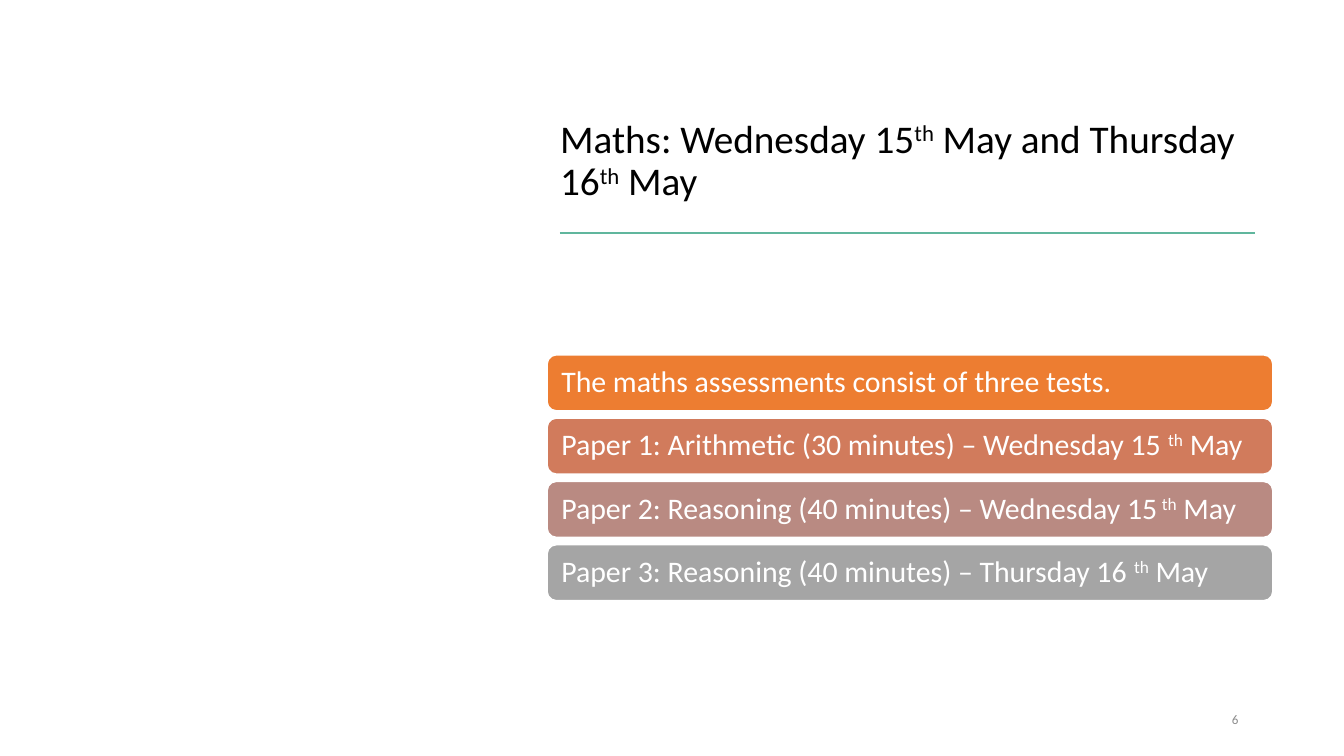
from dataclasses import dataclass

import pptx
import pptx.dml.color
import pptx.enum.shapes
import pptx.enum.text
import pptx.oxml.ns
import pptx.util
from lxml import etree

Pt = pptx.util.Pt
ALIGN = pptx.enum.text.PP_ALIGN
ANCHOR = pptx.enum.text.MSO_ANCHOR


@dataclass(frozen=True)
class Theme:
    font: str = "Calibri"
    title_size: float = 21
    test_size: float = 16
    number_size: float = 7
    ink: str = "000000"
    white: str = "FFFFFF"
    grey: str = "8C8C8C"
    rule: str = "60B69D"


THEME = Theme()
LEFT, WIDTH = 293, 389
BAR_TOP, BAR_HEIGHT, BAR_PITCH = 190, 30.2, 33.9

TITLE = ["Maths: Wednesday 15", "th", " May and Thursday 16", "th", " May"]
TESTS = [
    ("ED7D31", ["The maths assessments consist of three tests."]),
    ("D17B5C", ["Paper 1: Arithmetic (30 minutes) – Wednesday 15 ", "th", " May"]),
    ("B98A82", ["Paper 2: Reasoning (40 minutes) – Wednesday 15", " th", " May"]),
    ("A5A5A5", ["Paper 3: Reasoning (40 minutes) – Thursday 16 ", "th", " May"]),
]


def rgb(value):
    return pptx.dml.color.RGBColor.from_string(value)


def write(frame, pieces, size, color, anchor, align=ALIGN.LEFT):
    """Fill a frame with one paragraph; every second piece is superscript."""
    frame.word_wrap = True
    frame.vertical_anchor = anchor
    paragraph = frame.paragraphs[0]
    paragraph.alignment = align
    paragraph.line_spacing = 0.9
    for index, piece in enumerate(pieces):
        run = paragraph.add_run()
        run.text = piece
        run.font.name = THEME.font
        run.font.size = Pt(size)
        run.font.color.rgb = rgb(color)
        if index % 2:
            run.font._element.set("baseline", "30000")


def add_text(slide, left, top, width, height, *text):
    box = slide.shapes.add_textbox(Pt(left), Pt(top), Pt(width), Pt(height))
    write(box.text_frame, *text)


def add_rule(slide, left, right, y):
    rule = slide.shapes.add_connector(
        pptx.enum.shapes.MSO_CONNECTOR.STRAIGHT, Pt(left), Pt(y), Pt(right), Pt(y))
    rule.line.color.rgb = rgb(THEME.rule)
    rule.line.width = Pt(1.5)
    etree.SubElement(rule._element.spPr, pptx.oxml.ns.qn("a:effectLst"))


def add_test_bar(slide, top, fill, pieces):
    bar = slide.shapes.add_shape(
        pptx.enum.shapes.MSO_SHAPE.ROUNDED_RECTANGLE,
        Pt(LEFT), Pt(top), Pt(WIDTH), Pt(BAR_HEIGHT))
    bar.shadow.inherit = False
    bar.fill.solid()
    bar.fill.fore_color.rgb = rgb(fill)
    bar.line.color.rgb = rgb(THEME.white)
    bar.line.width = Pt(1)
    frame = bar.text_frame
    frame.margin_left = frame.margin_right = Pt(6.3)
    frame.margin_top = frame.margin_bottom = Pt(3)
    write(frame, pieces, THEME.test_size, THEME.white, ANCHOR.MIDDLE)


def main():
    deck = pptx.Presentation()
    deck.slide_width, deck.slide_height = Pt(720), Pt(405)
    slide = deck.slides.add_slide(deck.slide_layouts[6])

    add_text(slide, LEFT, 37.4, WIDTH, 75.6,
             TITLE, THEME.title_size, THEME.ink, ANCHOR.BOTTOM)
    add_rule(slide, 300, 672.5, 124.8)
    add_text(slide, 600.5, 375, 70, 21.6,
             ["6"], THEME.number_size, THEME.grey, ANCHOR.MIDDLE, ALIGN.RIGHT)
    for row, (fill, pieces) in enumerate(TESTS):
        add_test_bar(slide, BAR_TOP + row * BAR_PITCH, fill, pieces)

    deck.save("out.pptx")


if __name__ == "__main__":
    main()
